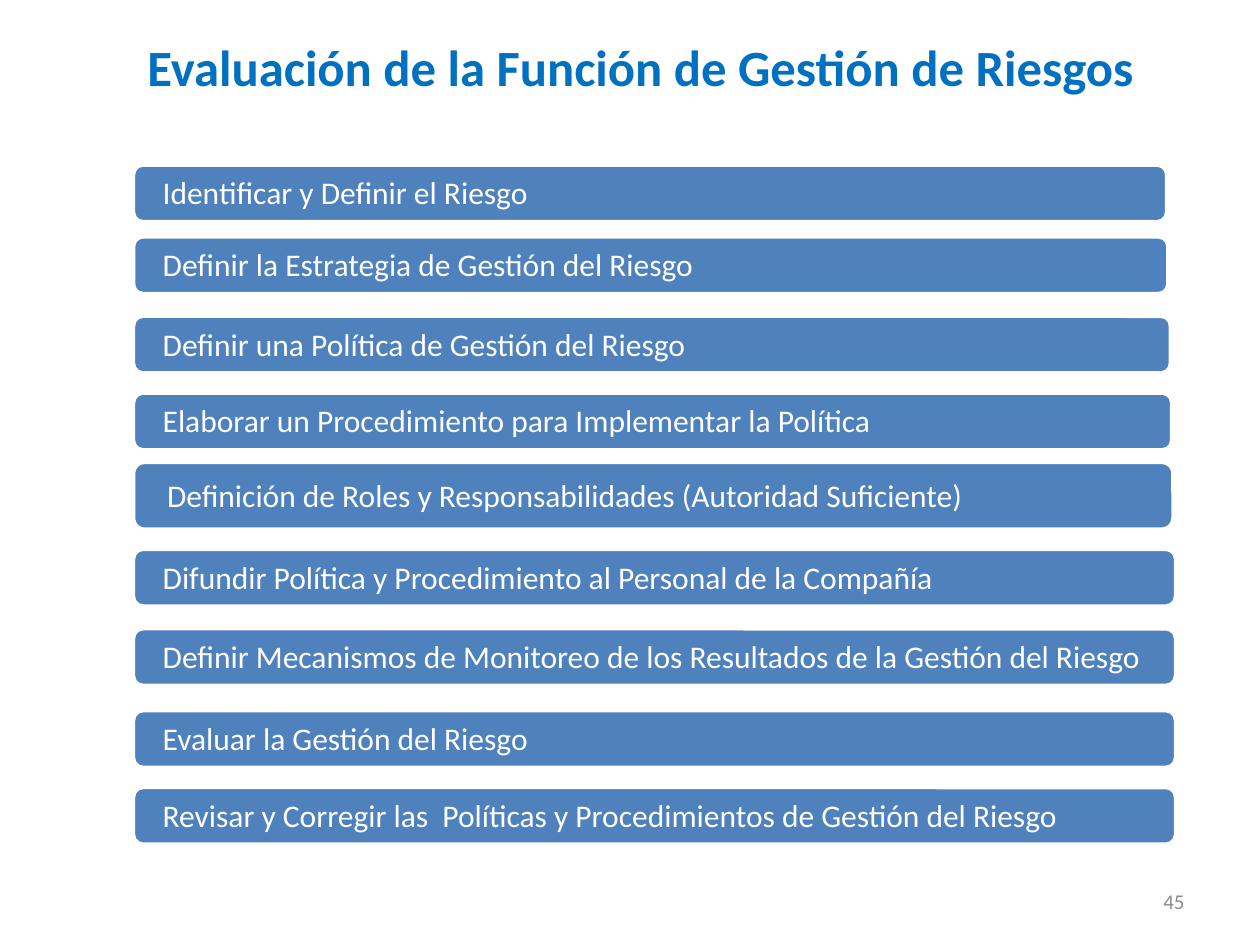
import pptx
import pptx.dml.color
import pptx.enum.shapes
import pptx.enum.text
import pptx.util

EMU_PER_PX = 9144
FONT = "Calibri"
TITLE_BLUE = pptx.dml.color.RGBColor(0x00, 0x70, 0xC0)
BAR_BLUE = pptx.dml.color.RGBColor(0x4F, 0x81, 0xBD)
WHITE = pptx.dml.color.RGBColor(0xFF, 0xFF, 0xFF)
GRAY = pptx.dml.color.RGBColor(0x8C, 0x8C, 0x8C)

BAR_LEFT = 106
BAR_HEIGHT = 45
TALL_BAR_HEIGHT = 53
BAR_INSET = 21
TALL_BAR_INSET = 24

STEPS = [
    (131, 820, BAR_HEIGHT, BAR_INSET, "Identificar y Definir el Riesgo"),
    (188, 821, BAR_HEIGHT, BAR_INSET, "Definir la Estrategia de Gestión del Riesgo"),
    (251, 823, BAR_HEIGHT, BAR_INSET, "Definir una Política de Gestión del Riesgo"),
    (312, 824, BAR_HEIGHT, BAR_INSET,
     "Elaborar un Procedimiento para Implementar la Política"),
    (367, 825, TALL_BAR_HEIGHT, TALL_BAR_INSET,
     "Definición de Roles y Responsabilidades (Autoridad Suficiente)"),
    (436, 827, BAR_HEIGHT, BAR_INSET,
     "Difundir Política y Procedimiento al Personal de la Compañía"),
    (499, 827, BAR_HEIGHT, BAR_INSET,
     "Definir Mecanismos de Monitoreo de los Resultados de la Gestión del Riesgo"),
    (564, 827, BAR_HEIGHT, BAR_INSET, "Evaluar la Gestión del Riesgo"),
    (625, 827, BAR_HEIGHT, BAR_INSET,
     "Revisar y Corregir las  Políticas y Procedimientos de Gestión del Riesgo"),
]


def px(length):
    return pptx.util.Emu(length * EMU_PER_PX)


def write_text(shape, text, size, color, alignment, bold=False):
    text_frame = shape.text_frame
    text_frame.text = text
    text_frame.word_wrap = True
    text_frame.vertical_anchor = pptx.enum.text.MSO_ANCHOR.MIDDLE
    paragraph = text_frame.paragraphs[0]
    paragraph.alignment = alignment
    font = paragraph.runs[0].font
    font.name = FONT
    font.size = pptx.util.Pt(size)
    font.bold = bold
    font.color.rgb = color
    return paragraph


def add_label(slide, left, top, width, height, text, size, color, alignment, bold=False):
    label = slide.shapes.add_textbox(px(left), px(top), px(width), px(height))
    write_text(label, text, size, color, alignment, bold)


def add_step(slide, top, width, height, inset, text):
    bar = slide.shapes.add_shape(
        pptx.enum.shapes.MSO_SHAPE.ROUNDED_RECTANGLE,
        px(BAR_LEFT), px(top), px(width), px(height))
    bar.shadow.inherit = False
    bar.fill.solid()
    bar.fill.fore_color.rgb = BAR_BLUE
    bar.line.color.rgb = WHITE
    bar.line.width = pptx.util.Pt(2)
    paragraph = write_text(bar, text, 18, WHITE, pptx.enum.text.PP_ALIGN.LEFT)
    paragraph.line_spacing = 0.9
    text_frame = bar.text_frame
    text_frame.margin_left = px(inset)
    text_frame.margin_right = px(BAR_INSET)
    text_frame.margin_top = px(2)
    text_frame.margin_bottom = 0


def main():
    presentation = pptx.Presentation()
    presentation.slide_width = px(1000)
    presentation.slide_height = px(750)
    slide = presentation.slides.add_slide(presentation.slide_layouts[6])
    add_label(slide, 59, 21, 900, 63, "Evaluación de la Función de Gestión de Riesgos",
              29, TITLE_BLUE, pptx.enum.text.PP_ALIGN.CENTER, bold=True)
    add_label(slide, 717, 695, 233, 40, "45", 12, GRAY, pptx.enum.text.PP_ALIGN.RIGHT)
    for step in STEPS:
        add_step(slide, *step)
    presentation.save("out.pptx")


if __name__ == "__main__":
    main()
